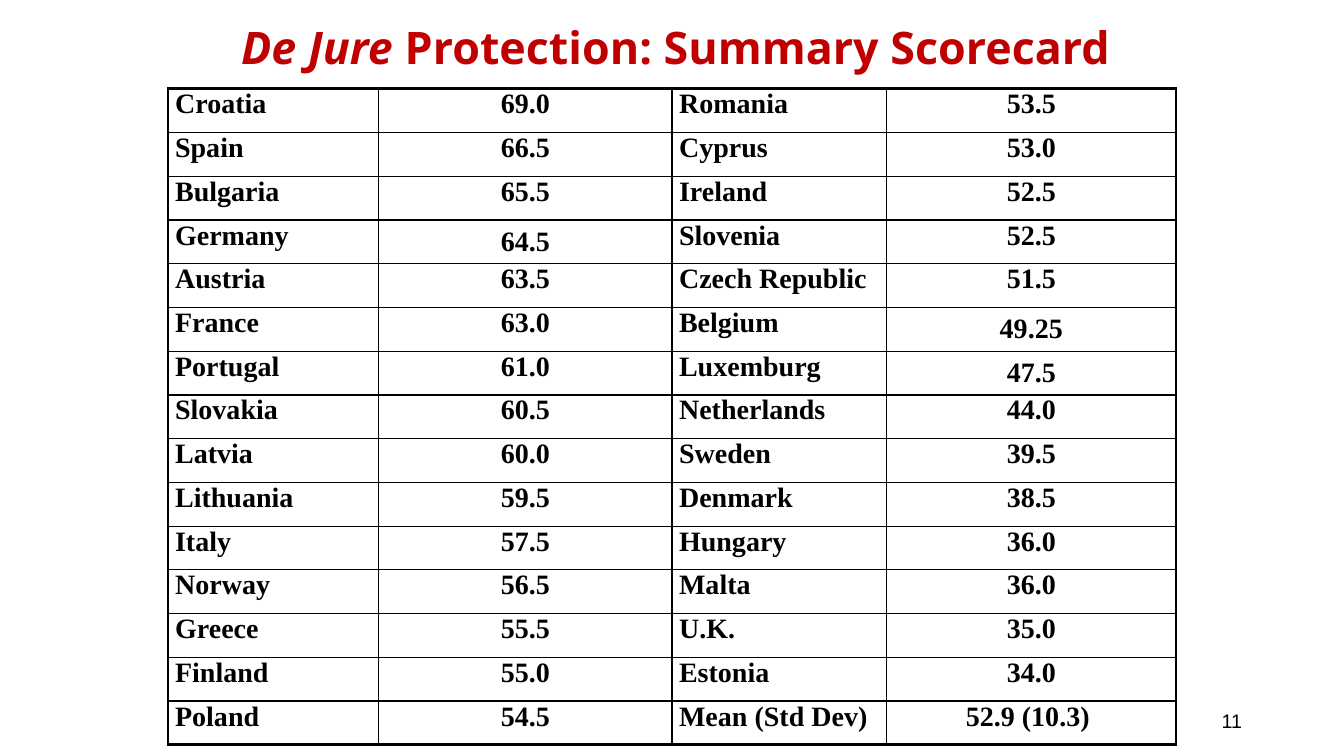
from lxml import etree
from pptx import Presentation
from pptx import util as u
from pptx.dml import color
from pptx.enum import text
from pptx.oxml import ns

COLORS = {"title": "C00000", "ink": "000000"}
SCORES = [
    ("Croatia", "69.0", "Romania", "53.5"),
    ("Spain", "66.5", "Cyprus", "53.0"),
    ("Bulgaria", "65.5", "Ireland", "52.5"),
    ("Germany", "64.5", "Slovenia", "52.5"),
    ("Austria", "63.5", "Czech Republic", "51.5"),
    ("France", "63.0", "Belgium", "49.25"),
    ("Portugal", "61.0", "Luxemburg", "47.5"),
    ("Slovakia", "60.5", "Netherlands", "44.0"),
    ("Latvia", "60.0", "Sweden", "39.5"),
    ("Lithuania", "59.5", "Denmark", "38.5"),
    ("Italy", "57.5", "Hungary", "36.0"),
    ("Norway", "56.5", "Malta", "36.0"),
    ("Greece", "55.5", "U.K.", "35.0"),
    ("Finland", "55.0", "Estonia", "34.0"),
    ("Poland", "54.5", "Mean (Std Dev)", "52.9 (10.3) "),
]
MIDDLE_SCORES = {"64.5", "49.25", "47.5"}
COLUMN_WIDTHS = [150.5, 209.5, 153.4, 206.6]
ROW_HEIGHT = 31.25


class ScorecardSlide:
    """Holds the style and the current page and adds elements to it."""

    def __init__(self, deck):
        self.page = deck.slides.add_slide(deck.slide_layouts[6])

    def style(self, para, font, size, ink, align, bold=False):
        para.alignment = align
        para.font.name = font
        para.font.size = u.Pt(size)
        para.font.bold = bold
        para.font.color.rgb = color.RGBColor.from_string(COLORS[ink])

    def text_box(self, left, top, width, height):
        box = self.page.shapes.add_textbox(*map(u.Pt, (left, top, width, height)))
        box.text_frame.word_wrap = True
        return box.text_frame

    def title(self, italic_words, plain_words):
        frame = self.text_box(105.8, 0, 753.8, 67.7)
        frame.margin_left = frame.margin_right = u.Pt(14.4)
        frame.margin_top = frame.margin_bottom = u.Pt(14.4)
        para = frame.paragraphs[0]
        self.style(para, "Noto Sans", 32, "title", text.PP_ALIGN.CENTER, True)
        for words, italic in ((italic_words, True), (plain_words, False)):
            span = para.add_run()
            span.text = words
            span.font.italic = italic

    def page_number(self, number):
        frame = self.text_box(678.2, 500.4, 216, 28.8)
        frame.vertical_anchor = text.MSO_ANCHOR.MIDDLE
        para = frame.paragraphs[0]
        para.text = number
        self.style(para, "Arial", 14, "ink", text.PP_ALIGN.RIGHT)

    def borders(self, cell, outer_sides):
        properties = cell._tc.get_or_add_tcPr()
        for side in "LRTB":
            width = 2.25 if side in outer_sides else 1
            line = etree.SubElement(properties, ns.qn(f"a:ln{side}"), w=str(u.Pt(width)))
            fill = etree.SubElement(line, ns.qn("a:solidFill"))
            etree.SubElement(fill, ns.qn("a:srgbClr"), val=COLORS["ink"])

    def cell(self, cell, words, is_score):
        cell.margin_left = cell.margin_right = u.Pt(5.1)
        cell.margin_top = cell.margin_bottom = 0
        middle = words in MIDDLE_SCORES
        cell.vertical_anchor = text.MSO_ANCHOR.MIDDLE if middle else text.MSO_ANCHOR.TOP
        para = cell.text_frame.paragraphs[0]
        para.text = words
        align = text.PP_ALIGN.CENTER if is_score else text.PP_ALIGN.LEFT
        self.style(para, "Times New Roman", 20, "ink", align, True)

    def table(self, rows, left, top):
        size = (sum(COLUMN_WIDTHS), ROW_HEIGHT * len(rows))
        frame = self.page.shapes.add_table(
            len(rows), len(COLUMN_WIDTHS), *map(u.Pt, (left, top, *size)))
        table = frame.table
        table.first_row = table.horz_banding = False
        for column, width in zip(table.columns, COLUMN_WIDTHS):
            column.width = u.Pt(width)
        last_row, last_column = len(rows) - 1, len(COLUMN_WIDTHS) - 1
        for r, row in enumerate(rows):
            table.rows[r].height = u.Pt(ROW_HEIGHT)
            for c, words in enumerate(row):
                cell = table.cell(r, c)
                self.cell(cell, words, c % 2 == 1)
                edges = {"L": c == 0, "R": c == last_column, "T": r == 0, "B": r == last_row}
                self.borders(cell, [side for side, outer in edges.items() if outer])
                cell.fill.background()


def main():
    deck = Presentation()
    deck.slide_width, deck.slide_height = u.Pt(960), u.Pt(540)
    scorecard = ScorecardSlide(deck)
    scorecard.title("De Jure ", "Protection: Summary Scorecard")
    scorecard.table(SCORES, 120, 63.4)
    scorecard.page_number("11")
    deck.save("out.pptx")


if __name__ == "__main__":
    main()
